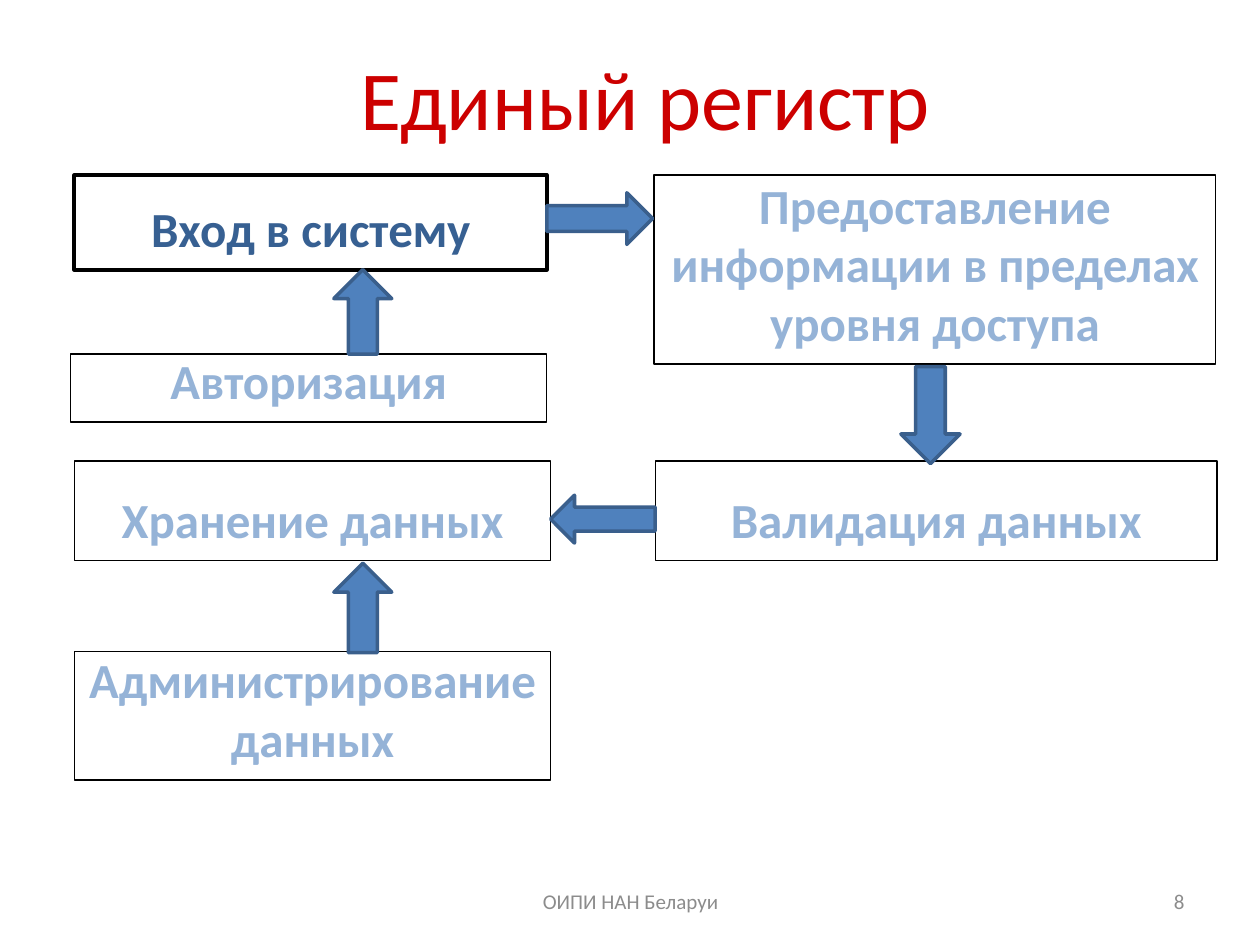
import pptx
import pptx.util
import pptx.dml.color
import pptx.enum.shapes
import pptx.enum.text

Inches = pptx.util.Inches
Pt = pptx.util.Pt
RGB = pptx.dml.color.RGBColor.from_string
SHAPE = pptx.enum.shapes.MSO_SHAPE
ALIGN = pptx.enum.text.PP_ALIGN
ANCHOR = pptx.enum.text.MSO_ANCHOR

COLORS = {
    "title": "CC0000",
    "current": "376092",
    "step": "95B3D7",
    "border": "000000",
    "arrow": "4F81BD",
    "arrow_edge": "3A5F8C",
    "footer": "8C8C8C",
}


def write_text(shape, text, size, color, bold=False, align=ALIGN.CENTER,
               anchor=ANCHOR.BOTTOM, bottom=0.1):
    frame = shape.text_frame
    frame.word_wrap = True
    frame.auto_size = pptx.enum.text.MSO_AUTO_SIZE.NONE
    frame.vertical_anchor = anchor
    frame.margin_left = frame.margin_right = Inches(0.1)
    frame.margin_top, frame.margin_bottom = Inches(0.05), Inches(bottom)
    paragraph = frame.paragraphs[0]
    paragraph.alignment = align
    run = paragraph.add_run()
    run.text = text
    run.font.name = "Calibri"
    run.font.size = Pt(size)
    run.font.bold = bold
    run.font.color.rgb = RGB(COLORS[color])


def add_outlined(kind, box, line_color, line_width, fill_color=None):
    shape = slide.shapes.add_shape(kind, *map(Inches, box))
    shape.shadow.inherit = False
    if fill_color:
        shape.fill.solid()
        shape.fill.fore_color.rgb = RGB(COLORS[fill_color])
    else:
        shape.fill.background()
    shape.line.color.rgb = RGB(COLORS[line_color])
    shape.line.width = Pt(line_width)
    return shape


deck = pptx.Presentation()
deck.slide_width, deck.slide_height = Inches(10), Inches(7.5)
slide = deck.slides.add_slide(deck.slide_layouts[5])

title = slide.shapes.title
title.left, title.top = Inches(0.94), Inches(0.23)
title.width, title.height = Inches(8.36), Inches(1.04)
write_text(title, "Единый регистр", size=48, color="title")

steps = [
    ("Вход в систему", (0.59, 1.39, 3.75, 0.75), "current", 2.25),
    ("Предоставление информации в пределах уровня доступа",
     (5.19, 1.39, 4.46, 1.5), "step", 0.75),
    ("Валидация данных", (5.2, 3.66, 4.46, 0.79), "step", 0.75),
    ("Хранение данных", (0.59, 3.66, 3.78, 0.79), "step", 0.75),
    ("Администрирование данных", (0.59, 5.17, 3.78, 1.02), "step", 0.75),
    ("Авторизация", (0.56, 2.81, 3.78, 0.54), "step", 0.75),
]
for label, box, color, border in steps:
    step = add_outlined(SHAPE.RECTANGLE, box, "border", border)
    write_text(step, label, size=28, color=color, bold=True)

flows = [
    (SHAPE.RIGHT_ARROW, (4.34, 1.53, 0.84, 0.41)),
    (SHAPE.DOWN_ARROW, (7.15, 2.91, 0.47, 0.77)),
    (SHAPE.LEFT_ARROW, (4.37, 3.93, 0.83, 0.38)),
    (SHAPE.UP_ARROW, (2.65, 4.47, 0.46, 0.71)),
    (SHAPE.UP_ARROW, (2.65, 2.14, 0.46, 0.67)),
]
for direction, box in flows:
    add_outlined(direction, box, "arrow_edge", 2, fill_color="arrow")

footers = [
    ("8", 7.17, 2.33, ALIGN.RIGHT),
    ("ОИПИ НАН Беларуи", 3.42, 3.17, ALIGN.CENTER),
]
for label, left, width, align in footers:
    footer = slide.shapes.add_textbox(Inches(left), Inches(6.95), Inches(width), Inches(0.4))
    write_text(footer, label, size=12, color="footer", align=align,
               anchor=ANCHOR.MIDDLE, bottom=0.05)

deck.save("out.pptx")
